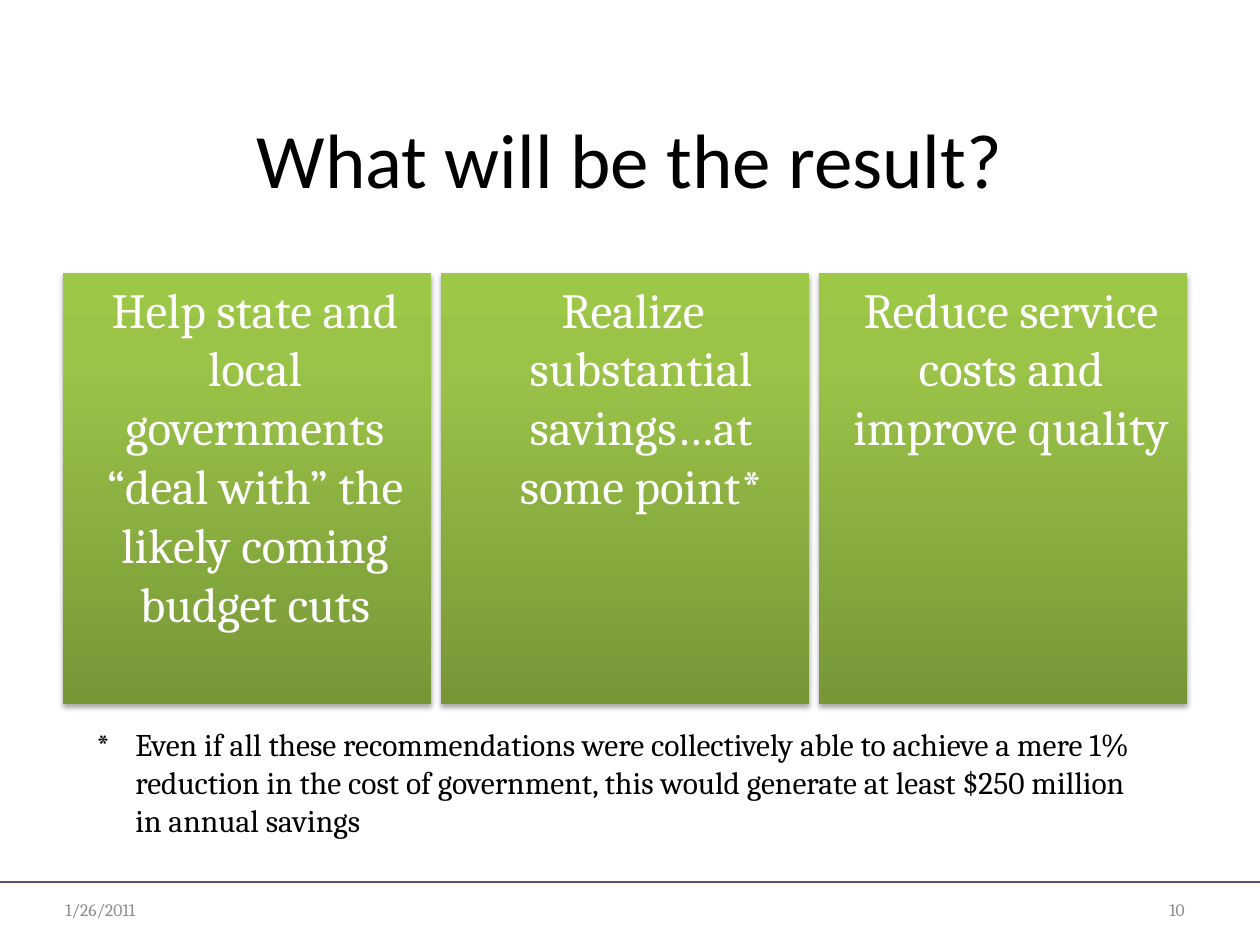
from dataclasses import dataclass

from lxml.etree import SubElement
from pptx import Presentation
from pptx.dml.color import RGBColor
from pptx.enum.shapes import MSO_CONNECTOR, MSO_SHAPE
from pptx.enum.text import MSO_ANCHOR, PP_ALIGN
from pptx.oxml.ns import qn
from pptx.shapes.autoshape import Shape
from pptx.slide import Slide
from pptx.util import Emu, Pt

PX_PER_INCH = 126


def px(length: int) -> Emu:
    return Emu(round(length * 914400 / PX_PER_INCH))


@dataclass(frozen=True)
class Theme:
    heading_font: str = "Calibri"
    body_font: str = "Cambria"
    ink: str = "000000"
    card_text: str = "FFFFFF"
    footer: str = "8C8C8C"
    rule: str = "604A7B"
    shadow: str = "000000"
    gradient: tuple[tuple[int, str], ...] = ((0, "779737"), (80, "9BC348"), (100, "9DC746"))
    title_size: int = 44
    card_size: int = 28
    note_size: int = 18
    footer_size: int = 10


THEME = Theme()


@dataclass(frozen=True)
class Box:
    left: int
    top: int
    width: int
    height: int


@dataclass(frozen=True)
class Style:
    font: str
    size: int
    color: str
    align: PP_ALIGN = PP_ALIGN.LEFT
    anchor: MSO_ANCHOR = MSO_ANCHOR.MIDDLE
    margin: int = 0
    indent: int = 0


@dataclass(frozen=True)
class Label:
    text: str
    box: Box
    style: Style


@dataclass(frozen=True)
class Card:
    text: str
    margin: int = 16
    indent: int = 0


CARDS = (
    Card("Help state and local governments “deal with” the likely coming budget cuts"),
    Card("Realize substantial savings…at some point*", margin=32, indent=-16),
    Card("Reduce service costs and improve quality"),
)
FIRST_CARD = Box(63, 273, 368, 431)
CARD_PITCH = 378

LABELS = (
    Label("1/26/2011", Box(53, 885, 231, 50),
          Style(THEME.body_font, THEME.footer_size, THEME.footer)),
    Label("10", Box(1124, 885, 73, 50),
          Style(THEME.body_font, THEME.footer_size, THEME.footer, PP_ALIGN.RIGHT)),
    Label("What will be the result?", Box(63, 105, 1134, 157),
          Style(THEME.heading_font, THEME.title_size, THEME.ink, PP_ALIGN.CENTER, MSO_ANCHOR.TOP)),
    Label("*\tEven if all these recommendations were collectively able to achieve a mere 1% "
          "reduction in the cost of government, this would generate at least $250 million "
          "in annual savings", Box(21, 714, 1124, 136),
          Style(THEME.body_font, THEME.note_size, THEME.ink, margin=102, indent=-39)),
)


def write_text(shape: Shape, text: str, style: Style) -> None:
    frame = shape.text_frame
    frame.word_wrap = True
    frame.vertical_anchor = style.anchor
    para = frame.paragraphs[0]
    para.text = text
    para.alignment = style.align
    properties = para._p.get_or_add_pPr()
    properties.set("marL", str(px(style.margin)))
    properties.set("indent", str(px(style.indent)))
    para.font.name = style.font
    para.font.size = Pt(style.size)
    para.font.color.rgb = RGBColor.from_string(style.color)


def add_label(slide: Slide, label: Label) -> None:
    box = label.box
    shape = slide.shapes.add_textbox(px(box.left), px(box.top), px(box.width), px(box.height))
    write_text(shape, label.text, label.style)


def add_color(parent, color: str):
    element = SubElement(parent, qn("a:srgbClr"))
    element.set("val", color)
    return element


def paint_gradient(shape: Shape) -> None:
    shape.fill.gradient()
    shape.fill.gradient_angle = 90
    stops = shape._element.spPr.find(qn("a:gradFill")).find(qn("a:gsLst"))
    for stop in list(stops):
        stops.remove(stop)
    for percent, color in THEME.gradient:
        stop = SubElement(stops, qn("a:gs"))
        stop.set("pos", str(percent * 1000))
        add_color(stop, color)


def add_shadow(shape: Shape) -> None:
    shape.shadow.inherit = False
    effects = shape._element.spPr.find(qn("a:effectLst"))
    shadow = SubElement(effects, qn("a:outerShdw"))
    shadow.set("blurRad", str(Pt(3.1)))
    shadow.set("dist", str(Pt(1.8)))
    shadow.set("dir", str(90 * 60000))
    shadow.set("rotWithShape", "0")
    alpha = SubElement(add_color(shadow, THEME.shadow), qn("a:alpha"))
    alpha.set("val", "35000")


def add_card(slide: Slide, card: Card, column: int) -> None:
    left = FIRST_CARD.left + column * CARD_PITCH
    shape = slide.shapes.add_shape(MSO_SHAPE.RECTANGLE, px(left), px(FIRST_CARD.top),
                                   px(FIRST_CARD.width), px(FIRST_CARD.height))
    paint_gradient(shape)
    shape.line.fill.background()
    add_shadow(shape)
    write_text(shape, card.text, Style(THEME.body_font, THEME.card_size, THEME.card_text,
                                       PP_ALIGN.CENTER, MSO_ANCHOR.TOP, card.margin, card.indent))


def add_rule(slide: Slide, top: int, width: int) -> None:
    rule = slide.shapes.add_connector(MSO_CONNECTOR.STRAIGHT, px(0), px(top), px(width), px(top))
    rule.line.color.rgb = RGBColor.from_string(THEME.rule)
    rule.line.width = Pt(0.75)
    SubElement(rule._element.spPr, qn("a:effectLst"))


def main() -> None:
    deck = Presentation()
    deck.slide_width, deck.slide_height = px(1260), px(945)
    page = deck.slides.add_slide(deck.slide_layouts[6])
    add_rule(page, 882, 1260)
    for column, card in enumerate(CARDS):
        add_card(page, card, column)
    for label in LABELS:
        add_label(page, label)
    deck.save("out.pptx")


if __name__ == "__main__":
    main()
